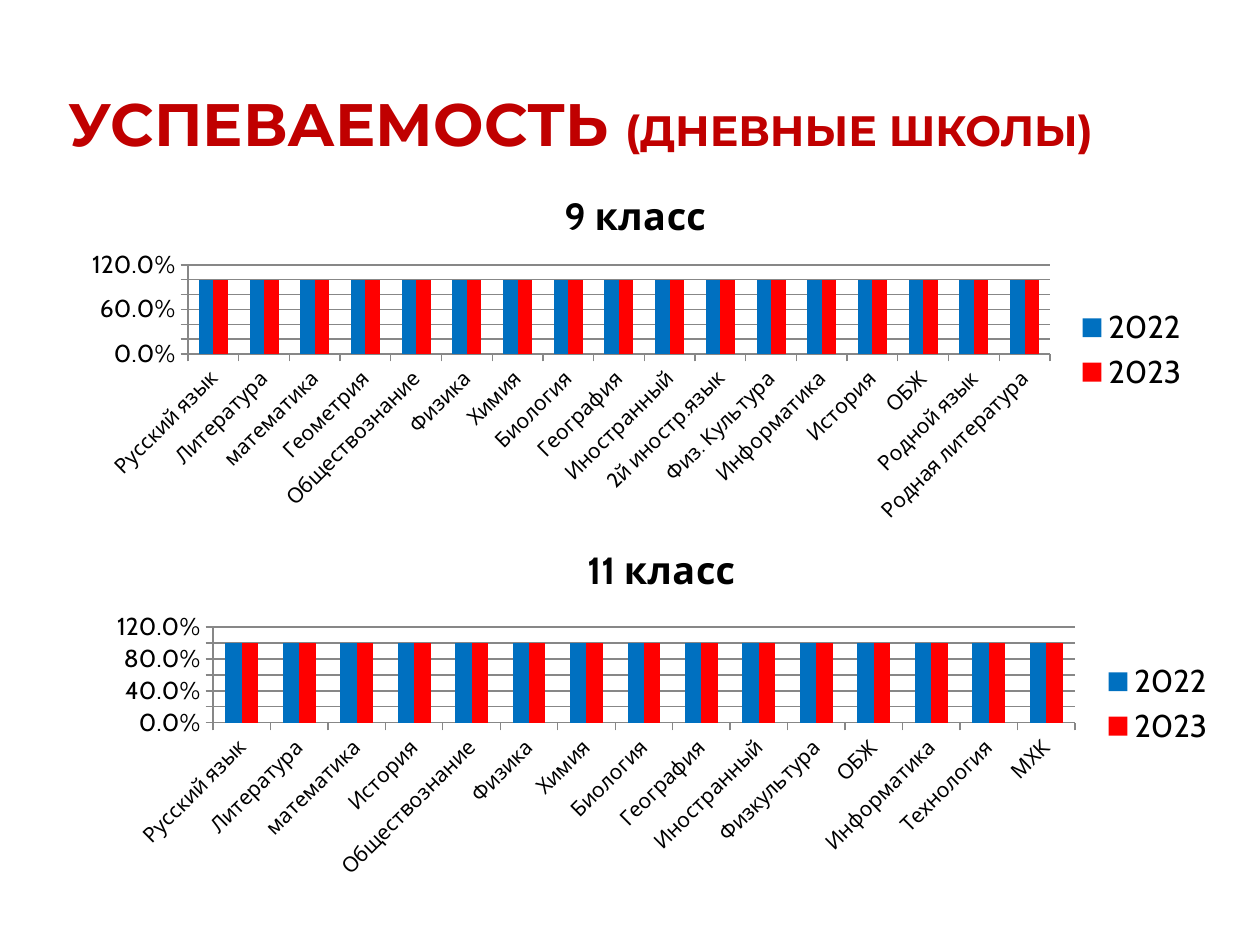
from lxml import etree
from pptx import Presentation
from pptx.chart.data import CategoryChartData
from pptx.dml.color import RGBColor
from pptx.enum.chart import XL_CHART_TYPE, XL_LEGEND_POSITION, XL_TICK_MARK
from pptx.enum.text import MSO_ANCHOR
from pptx.oxml.ns import qn
from pptx.util import Pt

COLUMNS = XL_CHART_TYPE.COLUMN_CLUSTERED
LEGEND_RIGHT = XL_LEGEND_POSITION.RIGHT
TICK_OUT = XL_TICK_MARK.OUTSIDE
BOTTOM = MSO_ANCHOR.BOTTOM

EMU_PER_PX = 914400 / 126
COLORS = {"title": "C00000", "text": "000000", "grid": "878787",
          "2022": "0070C0", "2023": "FF0000"}
CHART_SIZE = (1133, 364)
GRADES = [
    ("9 класс", (69, 168), (188, 265, 862, 89),
     ["Русский язык", "Литература", "математика", "Геометрия", "Обществознание",
      "Физика", "Химия", "Биология", "География", "Иностранный", "2й иностр.язык",
      "Физ. Культура", "Информатика", "История", "ОБЖ", "Родной язык",
      "Родная литература"]),
    ("11 класс", (95, 522), (213, 627, 862, 96),
     ["Русский язык", "Литература", "математика", "История", "Обществознание",
      "Физика", "Химия", "Биология", "География", "Иностранный", "Физкультура",
      "ОБЖ", "Информатика", "Технология", "МХК"]),
]


def px(length):
    """Turn pixels into EMU."""
    return round(length * EMU_PER_PX)


def color(name):
    """Look up a named colour."""
    return RGBColor.from_string(COLORS[name])


def style_font(font, size, name="Cabin", fill="text", bold=False):
    """Apply a format to a font."""
    font.size, font.name, font.bold = Pt(size), name, bold
    font.color.rgb = color(fill)


def add_run(paragraph, text, **style):
    """Add formatted text to a paragraph."""
    run = paragraph.add_run()
    run.text = text
    style_font(run.font, **style)


class SlideBuilder:
    """Draws styled elements on the current slide."""

    def __init__(self, slide):
        self.slide = slide

    def heading(self, box, runs):
        """Add the heading from pairs of text and size."""
        shape = self.slide.shapes.add_textbox(*map(px, box))
        frame = shape.text_frame
        frame.word_wrap = True
        frame.vertical_anchor = BOTTOM
        frame.margin_left = frame.margin_right = px(6)
        frame.margin_top = frame.margin_bottom = 0
        for text, size in runs:
            add_run(frame.paragraphs[0], text, size=size, name="Montserrat",
                    fill="title", bold=True)

    def column_chart(self, title, corner, plot_box, subjects):
        """Add a column chart of full attainment in both years."""
        data = CategoryChartData(number_format="0.0%")
        data.categories = subjects
        for year in ("2022", "2023"):
            data.add_series(year, [1] * len(subjects))
        box = corner + CHART_SIZE
        chart = self.slide.shapes.add_chart(COLUMNS, *map(px, box), data).chart
        style_font(chart.font, 18)
        add_run(chart.chart_title.text_frame.paragraphs[0], title, size=21.6, bold=True)
        for overlay in chart.element.iter(qn("c:overlay")):
            overlay.set("val", "1")
        chart.has_legend = True
        chart.legend.position = LEGEND_RIGHT
        chart.legend.include_in_layout = False
        style_font(chart.legend.font, 18)
        plot = chart.plots[0]
        plot.gap_width = 150
        plot.overlap = 0
        plot.vary_by_categories = False
        for series in plot.series:
            series.format.fill.solid()
            series.format.fill.fore_color.rgb = color(series.name)
        self.axes(chart)
        self.plot_layout(chart, box, plot_box)

    def axes(self, chart):
        """Format both axes and the gridlines."""
        values = chart.value_axis
        values.minimum_scale, values.maximum_scale, values.major_unit = 0, 1.2, 0.2
        values.has_major_gridlines = True
        values.tick_labels.number_format = "0.0%"
        values.tick_labels.number_format_is_linked = False
        for axis, size in ((chart.category_axis, 12), (values, 14)):
            axis.major_tick_mark = TICK_OUT
            style_font(axis.tick_labels.font, size)
            axis.format.line.color.rgb = color("grid")
            axis.format.line.width = Pt(0.75)
        values.major_gridlines.format.line.color.rgb = color("grid")
        values.major_gridlines.format.line.width = Pt(0.75)
        labels = chart.category_axis._element.find(qn("c:txPr"))
        labels.find(qn("a:bodyPr")).set("rot", "-2700000")

    def plot_layout(self, chart, box, plot_box):
        """Place the inner plot area inside the chart."""
        left, top, width, height = box
        plot_left, plot_top, plot_width, plot_height = plot_box
        area = next(chart.element.iter(qn("c:plotArea")))
        layout = area.find(qn("c:layout"))
        if layout is None:
            layout = etree.Element(qn("c:layout"))
            area.insert(0, layout)
        manual = etree.SubElement(layout, qn("c:manualLayout"))
        settings = {"layoutTarget": "inner", "xMode": "edge", "yMode": "edge",
                    "x": (plot_left - left) / width, "y": (plot_top - top) / height,
                    "w": plot_width / width, "h": plot_height / height}
        for tag, value in settings.items():
            etree.SubElement(manual, qn("c:" + tag)).set("val", str(value))


def main():
    """Build and save the slide."""
    presentation = Presentation()
    presentation.slide_width, presentation.slide_height = px(1260), px(945)
    slide = presentation.slides.add_slide(presentation.slide_layouts[6])
    builder = SlideBuilder(slide)
    builder.heading((63, 38, 1134, 120),
                    [("УСПЕВАЕМОСТЬ ", 34.2), ("(ДНЕВНЫЕ ШКОЛЫ)", 24.3)])
    for grade in GRADES:
        builder.column_chart(*grade)
    presentation.save("out.pptx")


if __name__ == "__main__":
    main()
